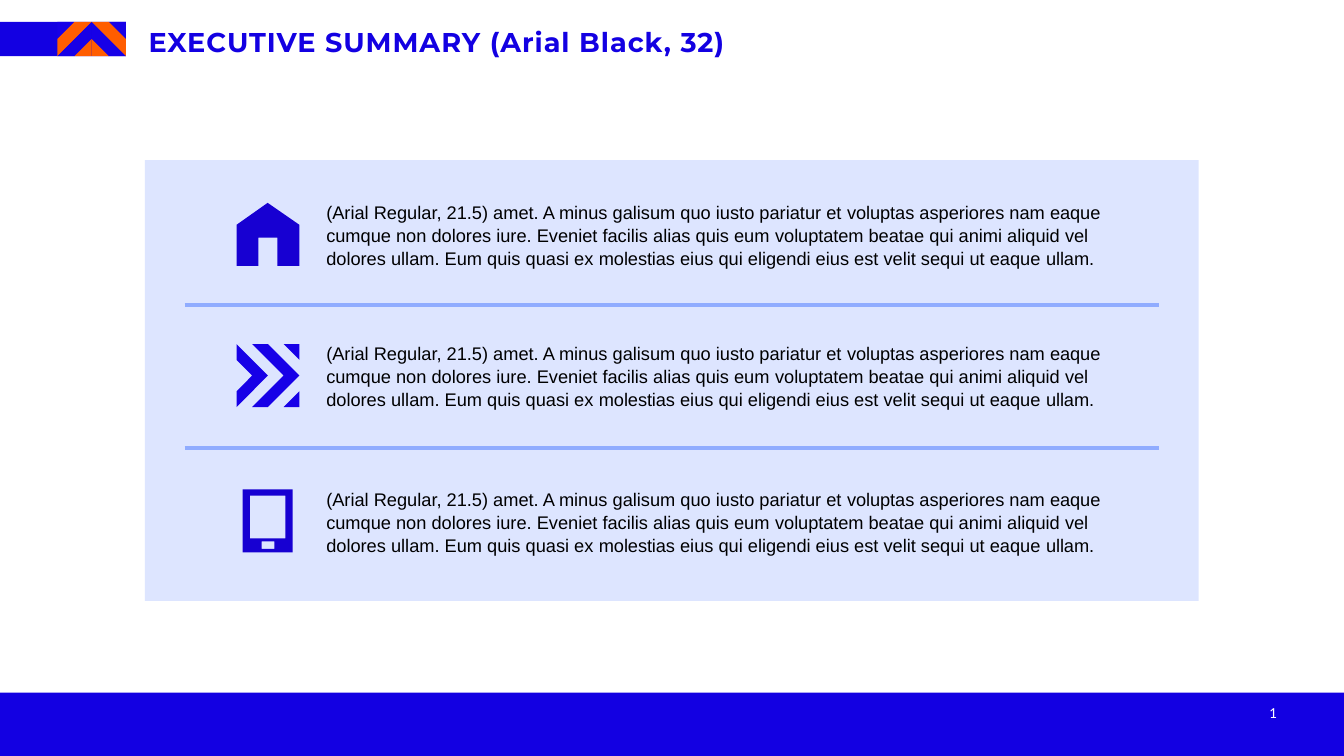
from dataclasses import dataclass

from lxml import etree
from pptx import Presentation, util as u
from pptx.dml.color import RGBColor
from pptx.enum import shapes, text
from pptx.oxml.ns import qn


@dataclass(frozen=True)
class Theme:
    blue: str = "1300E2"
    bright_blue: str = "1700E7"
    icon_blue: str = "1700D2"
    light_blue: str = "90ACFF"
    orange: str = "FF5D00"
    black: str = "000000"
    white: str = "FFFFFF"
    title_font: str = "Montserrat"
    body_font: str = "Arial"
    number_font: str = "Calibri"
    title_size: float = 32
    body_size: float = 21.5
    number_size: float = 18
    rule_width: float = 4.12
    body_spacing: float = 1.05


class SlideBuilder:
    """Draws on one slide; lengths are cells of a grid of 100 columns by 100 rows."""

    def __init__(self, presentation, theme):
        self.theme = theme
        self.slide = presentation.slides.add_slide(presentation.slide_layouts[6])
        self.column = presentation.slide_width / 100
        self.row = presentation.slide_height / 100

    def place(self, left, top, width, height):
        return (round(left * self.column), round(top * self.row),
                round(width * self.column), round(height * self.row))

    def paint(self, shape, color, opacity=None):
        shape.shadow.inherit = False
        shape.line.fill.background()
        shape.fill.solid()
        shape.fill.fore_color.rgb = RGBColor.from_string(color)
        if opacity is not None:
            color_node = shape.fill._xPr.find(qn("a:solidFill"))[0]
            etree.SubElement(color_node, qn("a:alpha"), val=str(opacity * 1000))

    def rectangle(self, box, color, opacity=None):
        shape = self.slide.shapes.add_shape(shapes.MSO_SHAPE.RECTANGLE, *self.place(*box))
        self.paint(shape, color, opacity)

    def outline(self, box, units, contours, color):
        """Draw contours whose points lie on a local grid of (across, down) units."""
        left, top, width, height = self.place(*box)
        first, *others = contours
        builder = self.slide.shapes.build_freeform(
            *first[0], scale=(width / units[0], height / units[1]))
        builder.add_line_segments(first[1:], close=True)
        for contour in others:
            builder.move_to(*contour[0])
            builder.add_line_segments(contour[1:], close=True)
        self.paint(builder.convert_to_shape(left, top), color)

    def rule(self, left, right, row):
        x1, y, x2, _ = self.place(left, row, right, 0)
        connector = self.slide.shapes.add_connector(shapes.MSO_CONNECTOR.STRAIGHT, x1, y, x2, y)
        connector.line.color.rgb = RGBColor.from_string(self.theme.light_blue)
        connector.line.width = u.Pt(self.theme.rule_width)
        etree.SubElement(connector._element.spPr, qn("a:effectLst"))

    def text(self, box, paragraphs, font, size, color, bold=False,
             align=text.PP_ALIGN.LEFT, line_spacing=None, inset=None):
        """Each paragraph is a list of (wording, letter spacing in points)."""
        frame = self.slide.shapes.add_textbox(*self.place(*box)).text_frame
        frame.word_wrap = True
        if inset is not None:
            frame.margin_left = frame.margin_right = frame.margin_bottom = 0
            frame.margin_top = u.Inches(inset)
        for index, runs in enumerate(paragraphs):
            paragraph = frame.add_paragraph() if index else frame.paragraphs[0]
            paragraph.alignment = align
            paragraph.line_spacing = line_spacing
            for wording, spacing in runs:
                run = paragraph.add_run()
                run.text = wording
                run.font.name = font
                run.font.size = u.Pt(size)
                run.font.bold = bold
                run.font.color.rgb = RGBColor.from_string(color)
                if spacing:
                    run.font._element.set("spc", str(round(spacing * 100)))


SUMMARY = [
    [("(Arial Regular, 21.5) amet. A minus galisum quo iusto pariatur et ", 0),
     ("voluptas ", -0.1), ("asperiores nam ", 0), ("eaque", -0.1)],
    [("cumque non dolores iure. Eveniet facilis alias quis eum ", 0),
     ("voluptatem ", -0.1), ("beatae qui animi aliquid ", 0), ("vel", -0.2)],
    [("dolores ullam. Eum quis quasi ex ", 0), ("molestias ", -0.1),
     ("eius qui eligendi eius est velit sequi ut eaque ", 0), ("ullam.", -0.1)],
]

HOUSE = [[(51, 0), (0, 36), (0, 103), (36, 103), (36, 57),
          (67, 57), (67, 103), (103, 103), (103, 36)]]
CHEVRONS = [
    [(0, 0), (2, 2), (0, 4), (0, 3), (1, 2), (0, 1)],
    [(1, 0), (2, 0), (4, 2), (2, 4), (1, 4), (3, 2)],
    [(3, 0), (4, 0), (4, 1)],
    [(4, 3), (4, 4), (3, 4)],
]
TABLET = [
    [(10, 0), (92, 0), (92, 103), (10, 103)],
    [(22, 10), (22, 80), (80, 80), (80, 10)],
    [(41, 85), (41, 97), (62, 97), (62, 85)],
]


def draw_banner(builder):
    theme = builder.theme
    top, height = 2.91, 4.53
    builder.rectangle((0, top, 9.37, height), theme.blue)
    # Left half of the ornament; the right half mirrors it
    pieces = [
        ([(0, 0), (1, 0), (0, 1)], theme.bright_blue),
        ([(2, 0), (1, 0), (0, 1), (0, 2)], theme.orange),
        ([(2, 0), (0, 2), (1, 2), (2, 1)], theme.bright_blue),
        ([(2, 1), (1, 2), (2, 2)], theme.orange),
    ]
    for points, color in pieces:
        mirrored = [(4 - x, y) for x, y in points]
        for contour in (points, mirrored):
            builder.outline((4.27, top, 5.1, height), (4, 2), [contour], color)


def main():
    theme = Theme()
    presentation = Presentation()
    presentation.slide_width = u.Inches(21.99)
    presentation.slide_height = u.Inches(12.37)
    builder = SlideBuilder(presentation, theme)

    # Footer with page number
    builder.rectangle((0, 91.6, 100, 8.4), theme.blue)
    builder.text((72, 92.97, 23, 2.4), [[("1", 0)]], theme.number_font, theme.number_size,
                 theme.white, align=text.PP_ALIGN.RIGHT, inset=0)

    # Banner and title
    draw_banner(builder)
    builder.text((11.05, 3.23, 83.3, 4.45), [[("EXECUTIVE SUMMARY (Arial Black, 32)", 1.1)]],
                 theme.title_font, theme.title_size, theme.blue, bold=True, inset=0.02)

    # Panel and its dividers
    builder.rectangle((10.78, 21.18, 78.4, 58.29), theme.light_blue, opacity=30)
    for row in (40.34, 59.26):
        builder.rule(13.73, 86.22, row)

    # One icon and one text for each point
    points = [
        (26.11, HOUSE, 103, theme.icon_blue),
        (44.79, CHEVRONS, 4, theme.bright_blue),
        (64.03, TABLET, 103, theme.icon_blue),
    ]
    for top, icon, units, color in points:
        builder.outline((17.6, top + 0.72, 4.68, 8.33), (units, units), icon, color)
        builder.text((23.83, top, 59.1, 12.05), SUMMARY, theme.body_font, theme.body_size,
                     theme.black, line_spacing=theme.body_spacing)

    presentation.save("out.pptx")


if __name__ == "__main__":
    main()
